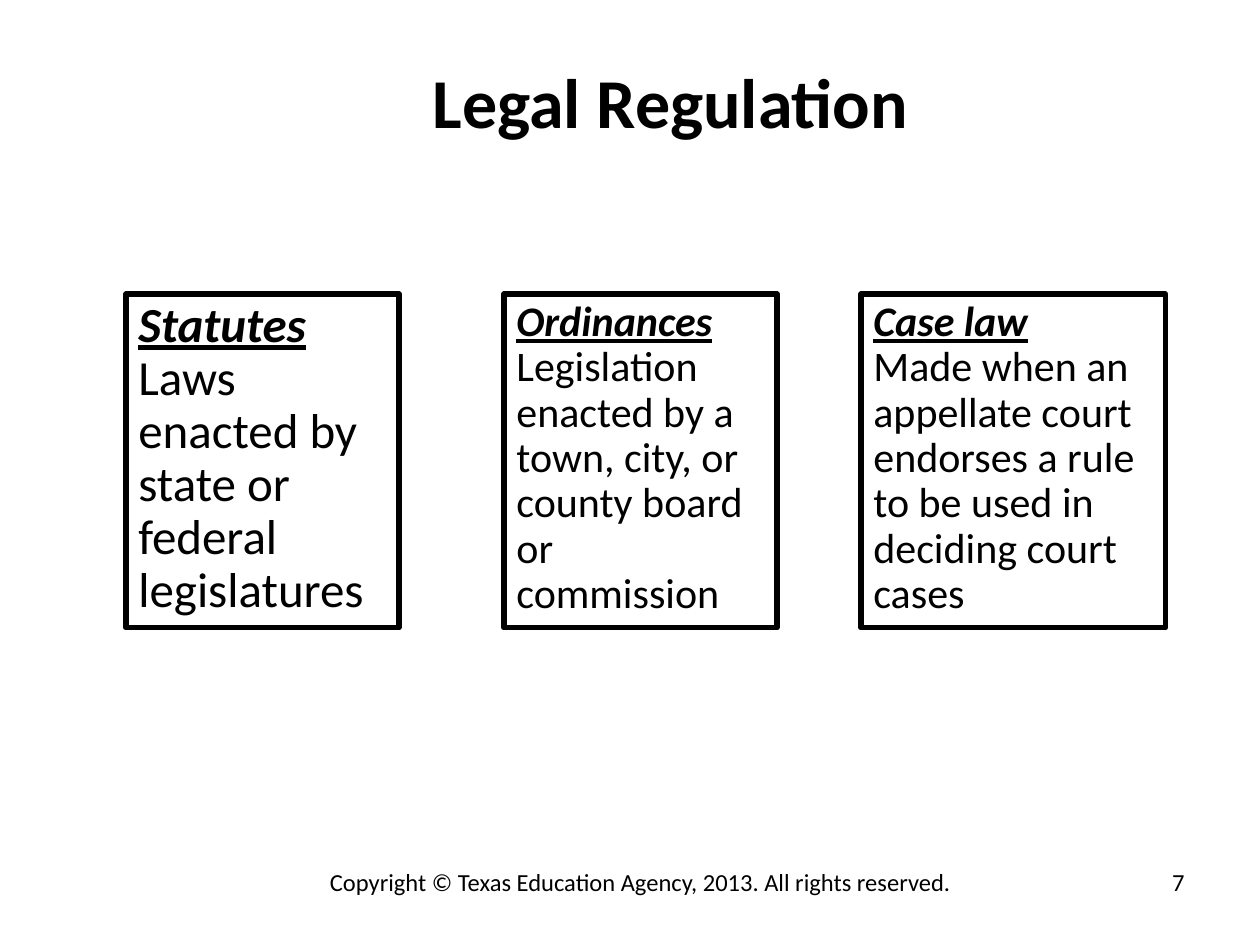
from dataclasses import dataclass

from pptx import Presentation
from pptx import util as u
from pptx.dml.color import RGBColor
from pptx.enum import shapes, text

WIDTH, HEIGHT = 10, 7.5
COL, ROW = WIDTH / 60, HEIGHT / 90
BLACK = "000000"
FONT = "Calibri"


@dataclass
class Card:
    col: float
    cols: float
    size: int
    term: str
    meaning: str


@dataclass
class Footer:
    col: float
    cols: float
    align: text.PP_ALIGN
    words: str


CARDS = [
    Card(6, 13, 28, "Statutes", "Laws enacted by state or federal legislatures"),
    Card(24, 13, 24, "Ordinances",
         "Legislation enacted by a town, city, or county board or commission"),
    Card(41, 14.5, 24, "Case law",
         "Made when an appellate court endorses a rule to be used in deciding court cases"),
]
FOOTERS = [
    Footer(43, 14, text.PP_ALIGN.RIGHT, "7"),
    Footer(9, 43, text.PP_ALIGN.CENTER,
           "Copyright © Texas Education Agency, 2013. All rights reserved."),
]


def color(value: str) -> RGBColor:
    return RGBColor.from_string(value)


def grid(col: float, row: float, cols: float, rows: float) -> list:
    return [u.Inches(n) for n in (col * COL, row * ROW, cols * COL, rows * ROW)]


def style(p, size: int, align=text.PP_ALIGN.LEFT, bold=False, term=False) -> None:
    p.alignment = align
    for r in p.runs:
        f = r.font
        f.name, f.size, f.color.rgb = FONT, u.Pt(size), color(BLACK)
        f.bold, f.italic, f.underline = bold or term, term, term


def add_title(s, words: str) -> None:
    sp = s.shapes.title
    sp.left, sp.top, sp.width, sp.height = grid(20, 5, 24.12, 9.24)
    tf = sp.text_frame
    tf.text = words
    tf.word_wrap = False
    tf.auto_size = text.MSO_AUTO_SIZE.SHAPE_TO_FIT_TEXT
    tf.vertical_anchor = text.MSO_ANCHOR.TOP
    style(tf.paragraphs[0], 40, bold=True)


def add_card(s, card: Card) -> None:
    sp = s.shapes.add_shape(shapes.MSO_SHAPE.RECTANGLE,
                            *grid(card.col, 28, card.cols, 31.8))
    sp.shadow.inherit = False
    sp.fill.background()
    sp.line.color.rgb = color(BLACK)
    sp.line.width = u.Pt(3)
    tf = sp.text_frame
    tf.text = f"{card.term}\n{card.meaning}"
    tf.word_wrap = True
    tf.auto_size = text.MSO_AUTO_SIZE.SHAPE_TO_FIT_TEXT
    tf.vertical_anchor = text.MSO_ANCHOR.TOP
    for i, p in enumerate(tf.paragraphs):
        p.line_spacing = 0.9
        style(p, card.size, term=i == 0)


def add_footer(s, footer: Footer) -> None:
    tf = s.shapes.add_textbox(*grid(footer.col, 82, footer.cols, 6.24)).text_frame
    tf.text = footer.words
    tf.word_wrap = True
    style(tf.paragraphs[0], 14, footer.align)


def main() -> None:
    prs = Presentation()
    prs.slide_width, prs.slide_height = u.Inches(WIDTH), u.Inches(HEIGHT)
    s = prs.slides.add_slide(prs.slide_layouts[5])
    add_title(s, "Legal Regulation")
    for card in CARDS:
        add_card(s, card)
    for footer in FOOTERS:
        add_footer(s, footer)
    prs.save("out.pptx")


if __name__ == "__main__":
    main()
